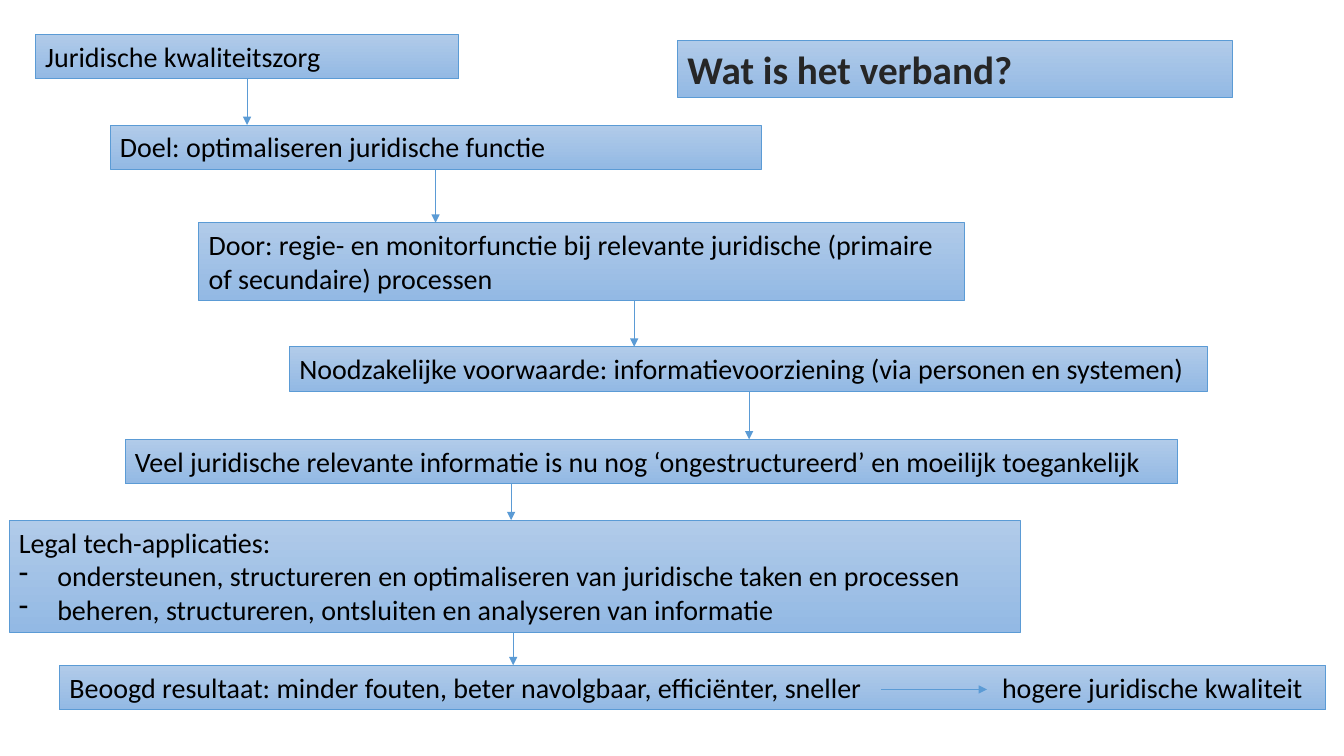
"""Build the slide that links legal quality care to legal tech applications."""
from itertools import pairwise

from lxml.etree import SubElement
from pptx import Presentation
from pptx.dml.color import RGBColor
from pptx.enum.shapes import MSO_CONNECTOR, MSO_SHAPE
from pptx.enum.text import MSO_ANCHOR, MSO_AUTO_SIZE, PP_ALIGN
from pptx.oxml.ns import qn
from pptx.util import Pt

PX = 9144
THEME = {
    "font": "Calibri",
    "text": RGBColor.from_string("000000"),
    "title": RGBColor.from_string("262626"),
    "line": RGBColor.from_string("5B9BD5"),
    "gradient": [RGBColor.from_string("B1CBE9"), RGBColor.from_string("93B9E4")],
    "text_size": Pt(20),
    "title_size": Pt(28),
    "line_width": Pt(0.5),
}
BULLET_INDENT = 38
RESULT_TAB = 925

TITLE = (672, 40, 550, 57, ["Wat is het verband?"])
STEPS = [
    (35, 34, 420, 44, ["Juridische kwaliteitszorg"]),
    (109, 124, 646, 44, ["Doel: optimaliseren juridische functie"]),
    (197, 221, 760, 77, ["Door: regie- en monitorfunctie bij relevante juridische (primaire of secundaire) processen"]),
    (287, 344, 911, 44, ["Noodzakelijke voorwaarde: informatievoorziening (via personen en systemen)"]),
    (124, 436, 1044, 44, ["Veel juridische relevante informatie is nu nog ‘ongestructureerd’ en moeilijk toegankelijk"]),
    (9, 516, 1003, 111, [
        "Legal tech-applicaties:",
        "ondersteunen, structureren en optimaliseren van juridische taken en processen",
        "beheren, structureren, ontsluiten en analyseren van informatie",
    ]),
    (59, 660, 1256, 44, ["Beoogd resultaat: minder fouten, beter navolgbaar, efficiënter, sneller\thogere juridische kwaliteit"]),
]
ARROW_LEFTS = [245, 432, 629, 743, 507, 509]


def add_box(page, left, top, width, height, lines, size, color, bold=False):
    box = page.shapes.add_shape(MSO_SHAPE.RECTANGLE, left * PX, top * PX, width * PX, height * PX)
    box.shadow.inherit = False
    box.fill.gradient()
    box.fill.gradient_angle = 270
    for stop, shade in zip(box.fill.gradient_stops, THEME["gradient"]):
        stop.color.rgb = shade
    box.line.color.rgb = THEME["line"]
    box.line.width = THEME["line_width"]
    frame = box.text_frame
    frame.word_wrap = True
    frame.auto_size = MSO_AUTO_SIZE.SHAPE_TO_FIT_TEXT
    frame.vertical_anchor = MSO_ANCHOR.TOP
    for index, line in enumerate(lines):
        para = frame.add_paragraph() if index else frame.paragraphs[0]
        para.alignment = PP_ALIGN.LEFT
        properties = para._p.get_or_add_pPr()
        if index:
            properties.set("marL", str(BULLET_INDENT * PX))
            properties.set("indent", str(-BULLET_INDENT * PX))
            SubElement(properties, qn("a:buChar"), char="-")
        if "\t" in line:
            tabs = SubElement(properties, qn("a:tabLst"))
            SubElement(tabs, qn("a:tab"), pos=str(RESULT_TAB * PX), algn="l")
        para.add_run().text = line
        para.font.name = THEME["font"]
        para.font.size = size
        para.font.bold = bold
        para.font.color.rgb = color


def add_arrow(page, start_x, start_y, end_x, end_y):
    arrow = page.shapes.add_connector(
        MSO_CONNECTOR.STRAIGHT, start_x * PX, start_y * PX, end_x * PX, end_y * PX)
    arrow.line.color.rgb = THEME["line"]
    arrow.line.width = THEME["line_width"]
    SubElement(arrow.line._get_or_add_ln(), qn("a:tailEnd"), type="triangle")
    SubElement(arrow._element.spPr, qn("a:effectLst"))


deck = Presentation()
deck.slide_width = 1333 * PX
deck.slide_height = 750 * PX
page = deck.slides.add_slide(deck.slide_layouts[6])

add_box(page, *TITLE, THEME["title_size"], THEME["title"], bold=True)
for step in STEPS:
    add_box(page, *step, THEME["text_size"], THEME["text"])

for arrow_left, (upper, lower) in zip(ARROW_LEFTS, pairwise(STEPS)):
    add_arrow(page, arrow_left, upper[1] + upper[3], arrow_left, lower[1])
add_arrow(page, 874, 684, 979, 684)

deck.save("out.pptx")
